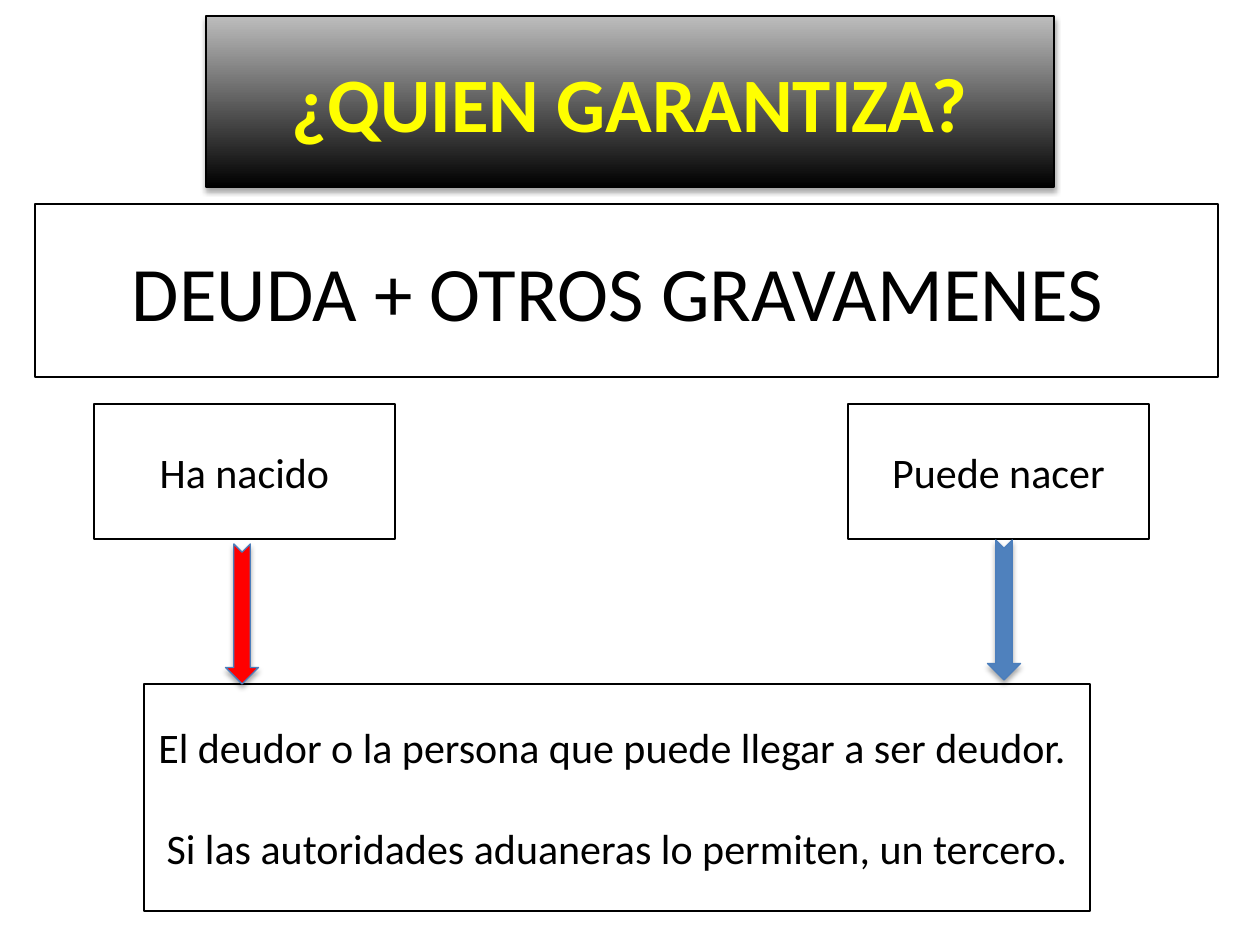
from lxml import etree
from pptx import Presentation
from pptx.dml.color import RGBColor
from pptx.enum.shapes import MSO_SHAPE
from pptx.enum.text import MSO_ANCHOR, PP_ALIGN
from pptx.oxml.ns import qn
from pptx.util import Emu, Pt

RECTANGLE = MSO_SHAPE.RECTANGLE
NOTCHED_ARROW = MSO_SHAPE.NOTCHED_RIGHT_ARROW
MIDDLE = MSO_ANCHOR.MIDDLE
CENTER = PP_ALIGN.CENTER

EMU_PER_PX = 914400 / 126
FONT = "Calibri"
COLORS = {
    "black": "000000",
    "gray": "BDBDBD",
    "yellow": "FFFF00",
    "red": "FF0000",
    "blue": "4F81BD",
    "arrow_edge": "4B7EBC",
}


def px(length):
    return Emu(round(length * EMU_PER_PX))


def rgb(name):
    return RGBColor.from_string(COLORS[name])


def add_outlined(slide, preset, bounds, edge):
    shape = slide.shapes.add_shape(preset, *map(px, bounds))
    shape.shadow.inherit = False
    shape.fill.background()
    shape.line.color.rgb = rgb(edge)
    shape.line.width = Pt(0.75)
    return shape


def add_shadow(shape):
    effects = shape._element.spPr.find(qn("a:effectLst"))
    shadow = etree.SubElement(
        effects, qn("a:outerShdw"), blurRad=str(Pt(3.1)), dist=str(Pt(1.8)),
        dir="5400000", rotWithShape="0")
    color = etree.SubElement(shadow, qn("a:srgbClr"), val=COLORS["black"])
    etree.SubElement(color, qn("a:alpha"), val="35000")


def add_box(slide, bounds, lines, size, color="black", bold=False, gap=0):
    box = add_outlined(slide, RECTANGLE, bounds, "black")
    frame = box.text_frame
    frame.word_wrap = True
    frame.vertical_anchor = MIDDLE
    frame.text = "\n".join(lines)
    for index, paragraph in enumerate(frame.paragraphs):
        paragraph.alignment = CENTER
        if index:
            paragraph.space_before = Pt(gap)
        font = paragraph.runs[0].font
        font.name = FONT
        font.size = Pt(size)
        font.bold = bold
        font.color.rgb = rgb(color)
    return box


def add_heading(slide, bounds, text):
    heading = add_box(slide, bounds, [text], 44, "yellow", bold=True)
    heading.fill.gradient()
    heading.fill.gradient_angle = 90
    for stop, color, position in zip(
            heading.fill.gradient_stops, ("black", "gray"), (0, 1)):
        stop.color.rgb = rgb(color)
        stop.position = position
    add_shadow(heading)


def add_down_arrow(slide, center_x, top, color):
    length, breadth = 140, 33
    # The preset points right, so its bounds are those before the turn
    bounds = (center_x - length / 2, top + (length - breadth) / 2,
              length, breadth)
    arrow = add_outlined(slide, NOTCHED_ARROW, bounds, "arrow_edge")
    arrow.rotation = 90
    arrow.fill.solid()
    arrow.fill.fore_color.rgb = rgb(color)
    add_shadow(arrow)


def main():
    deck = Presentation()
    deck.slide_width, deck.slide_height = px(1260), px(945)
    slide = deck.slides.add_slide(deck.slide_layouts[6])

    # What is guaranteed
    add_box(slide, (35, 204, 1183, 173), ["DEUDA + OTROS GRAVAMENES "], 44)

    # The two states of the debt
    for left, state in ((848, "Puede nacer"), (94, "Ha nacido")):
        add_box(slide, (left, 404, 301, 135), [state], 24)

    # Who guarantees it
    guarantors = [
        "El deudor o la persona que puede llegar a ser deudor. ",
        "Si las autoridades aduaneras lo permiten, un tercero.",
    ]
    add_box(slide, (144, 684, 946, 227), guarantors, 24, gap=29)

    # Arrows from each state to the guarantors
    add_down_arrow(slide, 242, 544, "red")
    add_down_arrow(slide, 1004, 540, "blue")

    # Heading
    add_heading(slide, (206, 16, 848, 171), "¿QUIEN GARANTIZA?")

    deck.save("out.pptx")


if __name__ == "__main__":
    main()
